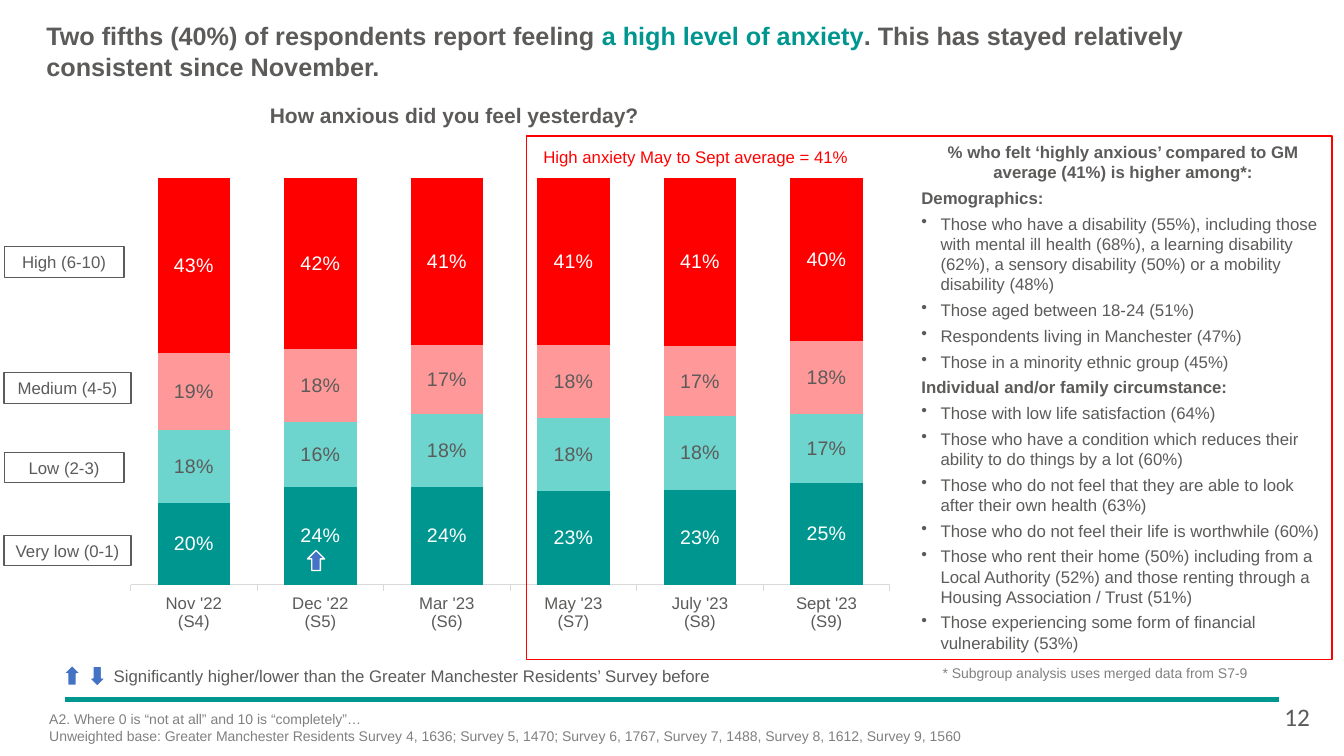
import pptx
import pptx.util
import pptx.chart.data
import pptx.dml.color
import pptx.enum.chart
import pptx.enum.shapes
import pptx.enum.text
import pptx.oxml
import pptx.oxml.ns

Inches = pptx.util.Inches
Pt = pptx.util.Pt
qn = pptx.oxml.ns.qn
SHAPE = pptx.enum.shapes.MSO_SHAPE
ALIGN = pptx.enum.text.PP_ALIGN
ANCHOR = pptx.enum.text.MSO_ANCHOR

GREY, PALE, TEAL, RED, BLUE = "5C5B5A", "808080", "009690", "FF0000", "4472C4"

MONTHS = ["Nov '22\n(S4)", "Dec '22\n(S5)", "Mar '23\n(S6)",
          "May '23\n(S7)", "July '23\n(S8)", "Sept '23\n(S9)"]
LEVELS = [
    ("Very low (0-1)", (0.20, 0.24, 0.24, 0.23, 0.23, 0.25), TEAL, "FFFFFF"),
    ("Low (2-3)", (0.18, 0.16, 0.18, 0.18, 0.18, 0.17), "6DD5CE", GREY),
    ("Medium (4-5)", (0.19, 0.18, 0.17, 0.18, 0.17, 0.18), "FF9999", GREY),
    ("High (6-10)", (0.43, 0.42, 0.41, 0.41, 0.41, 0.40), RED, "FFFFFF"),
]
TAGS = [(5.31, 1.26), (4.49, 1.19), (3.70, 1.26), (2.45, 1.19)]
LEAD = "% who felt ‘highly anxious’ compared to GM average (41%) is higher among*:"
GROUPS = [
    ("Demographics:", [
        "Those who have a disability (55%), including those with mental ill health (68%), "
        "a learning disability (62%), a sensory disability (50%) or a mobility disability (48%)",
        "Those aged between 18-24 (51%)",
        "Respondents living in Manchester (47%)",
        "Those in a minority ethnic group (45%)",
    ]),
    ("Individual and/or family circumstance:", [
        "Those with low life satisfaction (64%)",
        "Those who have a condition which reduces their ability to do things by a lot (60%)",
        "Those who do not feel that they are able to look after their own health (63%)",
        "Those who do not feel their life is worthwhile (60%)",
        "Those who rent their home (50%) including from a Local Authority (52%) and those "
        "renting through a Housing Association / Trust (51%)",
        "Those experiencing some form of financial vulnerability (53%)",
    ]),
]


def color(code):
    return pptx.dml.color.RGBColor.from_string(code)


def style(font, size, code=GREY, bold=False, name="Arial"):
    font.size, font.bold, font.name = Pt(size), bold, name
    font.color.rgb = color(code)


def place(box):
    return [Inches(v) for v in box]


def text(slide, box, lines, size, code=GREY, bold=False, align=ALIGN.LEFT,
         wrap=True, name="Arial", anchor=ANCHOR.TOP):
    frame = slide.shapes.add_textbox(*place(box)).text_frame
    frame.word_wrap, frame.vertical_anchor = wrap, anchor
    frame.text = "\n".join(lines)
    for para in frame.paragraphs:
        para.alignment = align
        style(para.font, size, code, bold, name)


def shape(slide, kind, box, fill=None, line=None, width=1):
    item = slide.shapes.add_shape(kind, *place(box))
    item.shadow.inherit = False
    if fill:
        item.fill.solid()
        item.fill.fore_color.rgb = color(fill)
    else:
        item.fill.background()
    if line:
        item.line.color.rgb = color(line)
        item.line.width = Pt(width)
    else:
        item.line.fill.background()
    return item


def arrow(slide, left, top, turn=0):
    item = shape(slide, SHAPE.DOWN_ARROW, (left, top, 0.17, 0.2), BLUE, "FFFFFF")
    item.rotation = turn


def heading(slide, box):
    title = slide.shapes.title
    title.left, title.top, title.width, title.height = place(box)
    frame = title.text_frame
    frame.margin_left = frame.margin_right = frame.margin_top = frame.margin_bottom = 0
    frame.word_wrap, frame.vertical_anchor = True, ANCHOR.MIDDLE
    frame.auto_size = pptx.enum.text.MSO_AUTO_SIZE.NONE
    para = frame.paragraphs[0]
    para.alignment = ALIGN.LEFT
    for part, code in [
        ("Two fifths (40%) of respondents report feeling ", GREY),
        ("a high level of anxiety", TEAL),
        (". This has stayed relatively consistent since November.", GREY),
    ]:
        run = para.add_run()
        run.text = part
        style(run.font, 18, code, True)


def tags(slide, left):
    for (top, width), level in zip(TAGS, LEVELS):
        item = shape(slide, SHAPE.RECTANGLE, (left, top, width, 0.3), line=GREY, width=0.75)
        frame = item.text_frame
        frame.word_wrap = True
        frame.text = level[0]
        frame.paragraphs[0].alignment = ALIGN.CENTER
        style(frame.paragraphs[0].font, 12)


def bars(slide, box):
    data = pptx.chart.data.CategoryChartData(number_format="0%")
    data.categories = MONTHS
    for name, values, _, _ in LEVELS:
        data.add_series(name, values)
    kind = pptx.enum.chart.XL_CHART_TYPE.COLUMN_STACKED_100
    chart = slide.shapes.add_chart(kind, *place(box), data).chart
    chart.has_legend = chart.has_title = False
    style(chart.font, 12)
    axis = chart.category_axis
    style(axis.tick_labels.font, 12)
    axis.major_tick_mark = pptx.enum.chart.XL_TICK_MARK.OUTSIDE
    axis.format.line.color.rgb = color("D9D9D9")
    axis.format.line.width = Pt(0.75)
    chart.value_axis.visible = False
    chart.value_axis.has_major_gridlines = False
    plot = chart.plots[0]
    plot.gap_width, plot.overlap = 75, 100
    for series, (_, _, fill, ink) in zip(plot.series, LEVELS):
        series.format.fill.solid()
        series.format.fill.fore_color.rgb = color(fill)
        labels = series.data_labels
        labels.show_value = True
        labels.number_format, labels.number_format_is_linked = "0%", False
        labels.position = pptx.enum.chart.XL_LABEL_POSITION.CENTER
        style(labels.font, 14, ink)
    area = chart.plots[0]._element.getparent()
    for old in area.findall(qn("c:layout")):
        area.remove(old)
    sizes = [("layoutTarget", "inner"), ("xMode", "edge"), ("yMode", "edge"),
             ("x", 0), ("y", 0.026), ("w", 1), ("h", 0.839)]
    inner = "".join(f'<c:{key} val="{val}"/>' for key, val in sizes)
    space = pptx.oxml.ns.nsdecls("c")
    area.insert(0, pptx.oxml.parse_xml(
        f"<c:layout {space}><c:manualLayout>{inner}</c:manualLayout></c:layout>"))


def bullet(para):
    props = para._p.get_or_add_pPr()
    props.set("marL", str(Inches(0.19)))
    props.set("indent", str(Inches(-0.19)))
    mark = props.makeelement(qn("a:buChar"), {"char": "•"})
    props.append(mark)


def panel(slide, box):
    item = shape(slide, SHAPE.RECTANGULAR_CALLOUT, box, "FFFFFF")
    item.adjustments[0], item.adjustments[1] = -0.61, -0.18
    frame = item.text_frame
    frame.word_wrap, frame.vertical_anchor = True, ANCHOR.MIDDLE
    rows = [(LEAD, "lead")]
    for head, points in GROUPS:
        rows += [(head, "head")] + [(point, "point") for point in points]
    frame.text = "\n".join(row[0] for row in rows)
    for para, (_, role) in zip(frame.paragraphs, rows):
        para.alignment = ALIGN.CENTER if role == "lead" else ALIGN.LEFT
        para.space_after = Pt(4)
        if role == "point":
            bullet(para)
        style(para.font, 12, GREY, role != "point")


def legend(slide, left, top):
    arrow(slide, left, top + 0.04, 180)
    arrow(slide, left + 0.25, top + 0.05)
    note = "Significantly higher/lower than the Greater Manchester Residents’ Survey before"
    text(slide, (left + 0.4, top, 6.14, 0.3), [note], 12, wrap=False)


def footer(slide, left, top, width):
    rule = slide.shapes.add_connector(
        pptx.enum.shapes.MSO_CONNECTOR.STRAIGHT,
        *place((left, top, left + width, top)))
    rule.line.color.rgb = color(TEAL)
    rule.line.width = Pt(3)
    props = rule._element.spPr
    props.append(props.makeelement(qn("a:effectLst"), {}))
    text(slide, (left - 0.25, top + 0.06, 11.83, 0.44), [
        "A2. Where 0 is “not at all” and 10 is “completely”…",
        "Unweighted base: Greater Manchester Residents Survey 4, 1636; Survey 5, 1470; "
        "Survey 6, 1767, Survey 7, 1488, Survey 8, 1612, Survey 9, 1560",
    ], 10, PALE)
    text(slide, (left + 12, top - 0.03, 0.53, 0.4), ["12"], 18,
         name="Calibri", anchor=ANCHOR.MIDDLE)


def main():
    deck = pptx.Presentation()
    deck.slide_width, deck.slide_height = Inches(13.33), Inches(7.5)
    slide = deck.slides.add_slide(deck.slide_layouts[5])
    heading(slide, (0.46, 0.2, 12.34, 0.61))
    text(slide, (2.56, 0.97, 3.89, 0.35), ["How anxious did you feel yesterday?"],
         15, bold=True, align=ALIGN.CENTER, wrap=False)
    tags(slide, 0.04)
    bars(slide, (1.29, 1.64, 7.54, 4.81))
    arrow(slide, 3.05, 5.46, 180)
    legend(slide, 0.63, 6.56)
    panel(slide, (9.04, 1.35, 4.2, 5.18))
    text(slide, (9.25, 6.54, 4, 0.27), ["* Subgroup analysis uses merged data from S7-9"], 10, PALE)
    footer(slide, 0.64, 6.94, 12.05)
    shape(slide, SHAPE.RECTANGLE, (5.22, 1.35, 7.99, 5.19), line=RED)
    text(slide, (5.29, 1.41, 3.53, 0.3), ["High anxiety May to Sept average = 41%"], 12, RED)


    deck.save("out.pptx")


if __name__ == "__main__":
    main()
